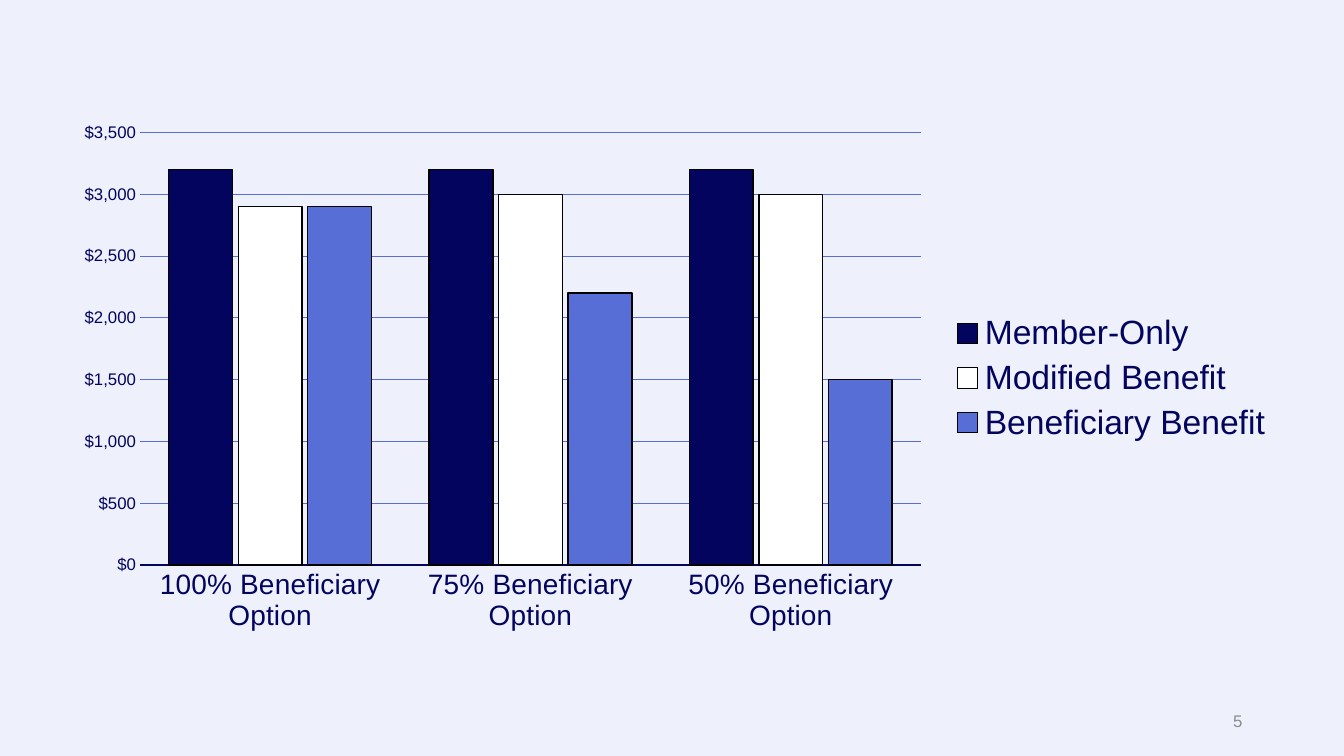
import pptx
import pptx.chart.data
import pptx.dml.color
import pptx.enum.chart
import pptx.enum.text
import pptx.oxml
import pptx.oxml.ns
import pptx.util
from pptx.dml.color import RGBColor
from pptx.util import Inches

# Content
NAVY = RGBColor(0x03, 0x04, 0x5E)
WHITE = RGBColor(0xFF, 0xFF, 0xFF)
BLUE = RGBColor(0x57, 0x6E, 0xD6)
BLACK = RGBColor(0, 0, 0)
GRAY = RGBColor(0x8C, 0x8C, 0x8C)
PALE = RGBColor(0xEE, 0xF0, 0xFB)

OPTIONS = ["100% Beneficiary Option", "75% Beneficiary Option", "50% Beneficiary Option"]
BENEFITS = [
    ("Member-Only", (3200, 3200, 3200), NAVY),
    ("Modified Benefit", (2900, 3000, 3000), WHITE),
    ("Beneficiary Benefit", (2900, 2200, 1500), BLUE),
]
PAGE_NUMBER = "5"
DOLLARS = '"$"#,##0'
PLOT_AREA = {"x": 0.065, "y": 0.037, "w": 0.638, "h": 0.816}  # shares of the chart


def style_font(font, size, color):
    font.name = "Arial"
    font.size = pptx.util.Pt(size)
    font.color.rgb = color


def style_line(line, width, color):
    line.color.rgb = color
    line.width = pptx.util.Pt(width)


def place_plot(chart, shares):
    plot_area = chart.plots[0]._element.getparent()
    for old in plot_area.findall(pptx.oxml.ns.qn("c:layout")):
        plot_area.remove(old)
    modes = '<c:layoutTarget val="inner"/><c:xMode val="edge"/><c:yMode val="edge"/>'
    sizes = "".join(f'<c:{side} val="{share}"/>' for side, share in shares.items())
    plot_area.insert(0, pptx.oxml.parse_xml(
        f'<c:layout {pptx.oxml.ns.nsdecls("c")}><c:manualLayout>{modes}{sizes}'
        "</c:manualLayout></c:layout>"))


# Slide
deck = pptx.Presentation()
deck.slide_width, deck.slide_height = Inches(13.33), Inches(7.5)
slide = deck.slides.add_slide(deck.slide_layouts[6])
slide.background.fill.solid()
slide.background.fill.fore_color.rgb = PALE

# Page number
page_box = slide.shapes.add_textbox(Inches(9.42), Inches(6.95), Inches(3), Inches(0.4))
page_frame = page_box.text_frame
page_frame.word_wrap = True
page_frame.vertical_anchor = pptx.enum.text.MSO_ANCHOR.MIDDLE
page_frame.text = PAGE_NUMBER
page_frame.paragraphs[0].alignment = pptx.enum.text.PP_ALIGN.RIGHT
style_font(page_frame.paragraphs[0].runs[0].font, 12, GRAY)

# Benefit chart
benefit_data = pptx.chart.data.CategoryChartData(number_format=DOLLARS)
benefit_data.categories = OPTIONS
for name, amounts, _ in BENEFITS:
    benefit_data.add_series(name, amounts)
chart = slide.shapes.add_chart(
    pptx.enum.chart.XL_CHART_TYPE.COLUMN_CLUSTERED,
    Inches(0.6), Inches(1.12), Inches(12.14), Inches(5.26), benefit_data).chart
chart.has_title = False
style_font(chart.font, 10, BLACK)
place_plot(chart, PLOT_AREA)

# Columns
columns = chart.plots[0]
columns.gap_width, columns.overlap = 90, -9
columns.vary_by_categories = False
for series, (_, _, color) in zip(columns.series, BENEFITS):
    series.format.fill.solid()
    series.format.fill.fore_color.rgb = color
    style_line(series.format.line, 1, BLACK)

# Axes
option_axis, dollar_axis = chart.category_axis, chart.value_axis
for axis, size in ((option_axis, 20), (dollar_axis, 12)):
    axis.major_tick_mark = axis.minor_tick_mark = pptx.enum.chart.XL_TICK_MARK.NONE
    style_font(axis.tick_labels.font, size, NAVY)
style_line(option_axis.format.line, 1.5, NAVY)
dollar_axis.format.line.fill.background()
dollar_axis.minimum_scale, dollar_axis.maximum_scale = 0, 3500
dollar_axis.major_unit = 500
dollar_axis.tick_labels.number_format = DOLLARS
dollar_axis.tick_labels.number_format_is_linked = False
dollar_axis.has_major_gridlines = True
style_line(dollar_axis.major_gridlines.format.line, 0.75, BLUE)

# Legend
chart.has_legend = True
chart.legend.position = pptx.enum.chart.XL_LEGEND_POSITION.RIGHT
chart.legend.include_in_layout = False
style_font(chart.legend.font, 24, NAVY)

deck.save("out.pptx")
